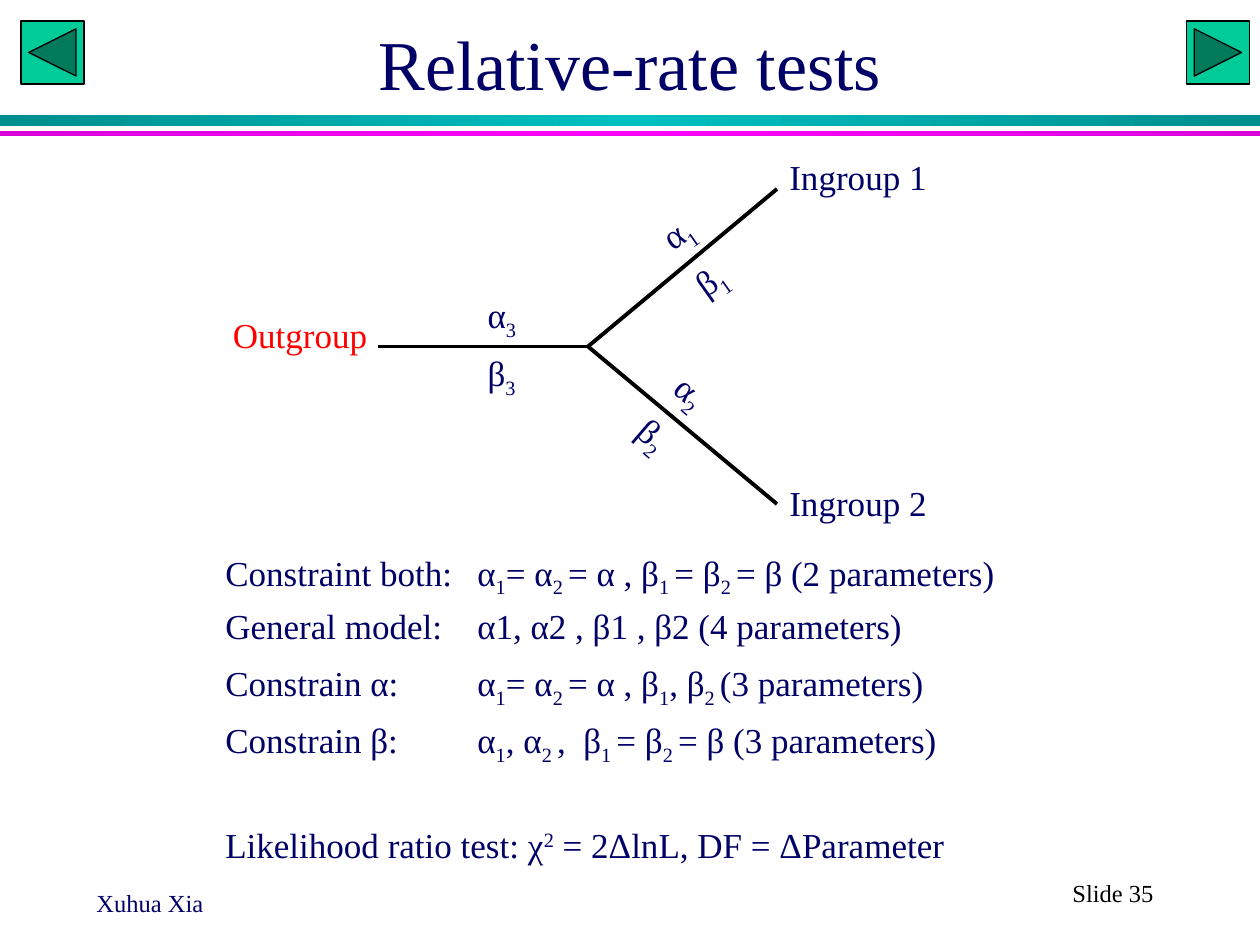
from copy import deepcopy

from lxml.etree import SubElement
from pptx import Presentation
from pptx.dml.color import RGBColor
from pptx.enum.shapes import MSO_CONNECTOR, MSO_SHAPE
from pptx.enum.text import MSO_ANCHOR, MSO_AUTO_SIZE, PP_ALIGN
from pptx.oxml.ns import qn
from pptx.util import Pt

FONT = "Times New Roman"
COLORS = {
    "text": "000066",
    "outgroup": "FF0000",
    "black": "000000",
    "button": "00CC99",
    "teal_edge": "008E8E",
    "teal": "00C0C0",
    "magenta_edge": "DA00DA",
    "magenta": "FF00FF",
}
PARAGRAPH_GAP = 11
TAB = 144


def rgb(name):
    return RGBColor.from_string(COLORS[name])


def style(p, size, color="text", align=PP_ALIGN.LEFT):
    p.alignment = align
    p.font.name = FONT
    p.font.size = Pt(size)
    p.font.color.rgb = rgb(color)


def add_runs(p, text):
    """Write text in which [x] is a subscript and [^x] a superscript."""
    for i, part in enumerate(text.replace("]", "[").split("[")):
        if not part:
            continue
        r = p.add_run()
        r.text = part.lstrip("^")
        if i % 2:
            r.font._element.set("baseline", "30000" if part[0] == "^" else "-25000")


def add_tab_stop(p, position):
    tabs = SubElement(p._p.get_or_add_pPr(), qn("a:tabLst"))
    SubElement(tabs, qn("a:tab"), pos=str(Pt(position)), algn="l")


def add_band(slide, top, height, edge, middle):
    sp = slide.shapes.add_shape(MSO_SHAPE.RECTANGLE, 0, Pt(top), Pt(720), Pt(height))
    sp.shadow.inherit = False
    sp.line.fill.background()
    sp.fill.gradient()
    sp.fill.gradient_angle = 0
    first = sp.fill.gradient_stops[0]._gs
    first.addnext(deepcopy(first))
    for stop, color, position in zip(sp.fill.gradient_stops, (edge, middle, edge), (0, 0.5, 1)):
        stop.color.rgb = rgb(color)
        stop.position = position


def add_button(slide, kind, left):
    sp = slide.shapes.add_shape(kind, Pt(left), Pt(12), Pt(36), Pt(36))
    sp.shadow.inherit = False
    sp.fill.solid()
    sp.fill.fore_color.rgb = rgb("button")
    sp.line.color.rgb = rgb("black")
    sp.line.width = Pt(0.75)


def add_branch(slide, start, end):
    line = slide.shapes.add_connector(MSO_CONNECTOR.STRAIGHT, *map(Pt, start + end))
    line.line.color.rgb = rgb("black")
    line.line.width = Pt(2.25)
    SubElement(line._element.spPr, qn("a:effectLst"))


def add_footer(slide, text, box, color, align):
    tf = slide.shapes.add_textbox(*map(Pt, box)).text_frame
    tf.word_wrap = True
    tf.text = text
    style(tf.paragraphs[0], 14, color, align)


def add_text(slide, lines, box, color="text", rotation=0, tab=None, last_gap=PARAGRAPH_GAP):
    sp = slide.shapes.add_textbox(*map(Pt, box))
    sp.rotation = rotation
    tf = sp.text_frame
    tf.word_wrap = True
    tf.auto_size = MSO_AUTO_SIZE.SHAPE_TO_FIT_TEXT
    for i, line in enumerate(lines):
        p = tf.add_paragraph() if i else tf.paragraphs[0]
        p.line_spacing = 0.8
        if i:
            p.space_before = Pt(last_gap if i == len(lines) - 1 else PARAGRAPH_GAP)
        if tab:
            add_tab_stop(p, tab)
        style(p, 20, color)
        add_runs(p, line)


def add_title(slide, text):
    title = slide.shapes.title
    title.left, title.top, title.width, title.height = map(Pt, (54, 0, 612, 72))
    tf = title.text_frame
    tf.text = text
    tf.vertical_anchor = MSO_ANCHOR.MIDDLE
    style(tf.paragraphs[0], 40, align=PP_ALIGN.CENTER)


def add_tree(slide):
    node = (336, 198)
    for tip in ((444, 108), (444, 288), (216, 198)):
        add_branch(slide, tip, node)
    for name, left, top, color in (
        ("Outgroup", 126, 180, "outgroup"),
        ("Ingroup 2", 444, 276, "text"),
        ("Ingroup 1", 444, 90, "text"),
    ):
        add_text(slide, [name], (left, top, 102, 27), color)
    for n, left, top, rotation in (
        (1, 378, 108, 324.7),
        (2, 366, 216, 40.5),
        (3, 271.5, 167, 0),
    ):
        add_text(slide, [f"α[{n}]", f"β[{n}]"], (left, top, 60, 58), rotation=rotation)


def main():
    prs = Presentation()
    prs.slide_width, prs.slide_height = Pt(720), Pt(540)
    slide = prs.slides.add_slide(prs.slide_layouts[5])

    add_band(slide, 66, 6, "teal_edge", "teal")
    add_band(slide, 75, 3, "magenta_edge", "magenta")
    add_button(slide, MSO_SHAPE.ACTION_BUTTON_BACK_OR_PREVIOUS, 12)
    add_button(slide, MSO_SHAPE.ACTION_BUTTON_FORWARD_OR_NEXT, 678)
    add_footer(slide, "Xuhua Xia", (48, 504, 150, 18), "text", PP_ALIGN.LEFT)
    add_footer(slide, "Slide 35", (564, 498, 144, 24), "black", PP_ALIGN.CENTER)
    add_title(slide, "Relative-rate tests")
    add_tree(slide)

    models = [
        "Constraint both:\tα[1]= α[2 ]= α , β[1 ]= β[2 ]= β (2 parameters)",
        "General model:\tα1, α2 , β1 , β2 (4 parameters)",
        "Constrain α:\tα[1]= α[2 ]= α , β[1], β[2 ](3 parameters)",
        "Constrain β:\tα[1], α[2 ],  β[1 ]= β[2 ]= β (3 parameters)",
        "Likelihood ratio test: χ[^2] = 2ΔlnL, DF = ΔParameter",
    ]
    add_text(slide, models, (121.7, 314, 510, 172), tab=TAB, last_gap=40)

    prs.save("out.pptx")


if __name__ == "__main__":
    main()
